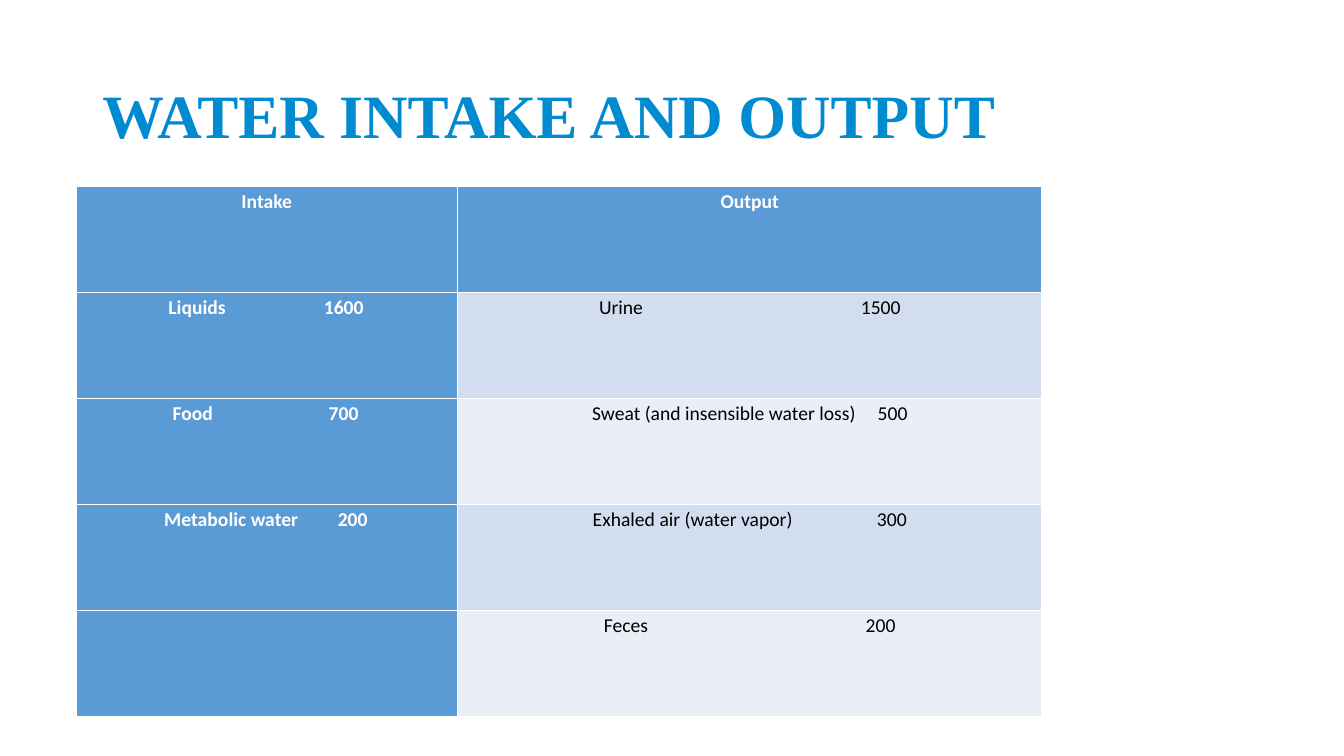
import pptx
import pptx.util
import pptx.dml.color
import pptx.enum.text
import lxml.etree
from pptx.oxml.ns import qn

Pt = pptx.util.Pt
Color = pptx.dml.color.RGBColor
Align = pptx.enum.text.PP_ALIGN

TITLE = Color(0x00, 0x8A, 0xD0)
BLUE = Color(0x5B, 0x9B, 0xD5)
BANDS = [Color(0xEA, 0xEF, 0xF7), Color(0xD2, 0xDE, 0xEF)]
WHITE = Color(0xFF, 0xFF, 0xFF)
BLACK = Color(0x00, 0x00, 0x00)

# Each entry: label, amount, left margin, distance from label to amount
INTAKE = [
    ("Liquids", "1600", 66, 111),
    ("Food", "700", 69, 111.5),
    ("Metabolic water", "200", 63, 124),
]
OUTPUT = [
    ("Urine", "1500", 101, 187),
    ("Sweat (and insensible water loss)", "500", 96, 204),
    ("Exhaled air (water vapor)", "300", 96.5, 203),
    ("Feces", "200", 104.5, 187),
]


def write(cell, text, color, bold):
    cell.text = text
    para = cell.text_frame.paragraphs[0]
    para.line_spacing = 1.15
    para.font.name = "Calibri"
    para.font.size = Pt(14)
    para.font.bold = bold
    para.font.color.rgb = color
    return para


deck = pptx.Presentation()
deck.slide_width, deck.slide_height = Pt(960), Pt(540)
slide = deck.slides.add_slide(deck.slide_layouts[5])

title = slide.shapes.title
title.left, title.top, title.width, title.height = Pt(66), Pt(28.8), Pt(1044 - 216), Pt(104.4)
title.text = "WATER INTAKE AND OUTPUT"
head = title.text_frame.paragraphs[0]
head.alignment = Align.LEFT
head.font.name = "Times New Roman"
head.font.size = Pt(44)
head.font.bold = True
head.font.color.rgb = TITLE

table = slide.shapes.add_table(5, 2, Pt(54.3), Pt(133.4), Pt(690), Pt(378.7)).table
table.first_col = True
table.columns[0].width = Pt(272.6)
table.columns[1].width = Pt(417.4)

for row in range(5):
    table.rows[row].height = Pt(75.74)
    for col in range(2):
        cell = table.cell(row, col)
        cell.margin_left = cell.margin_right = Pt(5)
        cell.margin_top = cell.margin_bottom = 0
        cell.fill.solid()
        cell.fill.fore_color.rgb = BLUE if row == 0 or col == 0 else BANDS[row % 2]

for col, (name, items) in enumerate([("Intake", INTAKE), ("Output", OUTPUT)]):
    write(table.cell(0, col), name, WHITE, True).alignment = Align.CENTER
    for row, (label, amount, left, gap) in enumerate(items, 1):
        cell = table.cell(row, col)
        cell.margin_left = Pt(left)
        para = write(cell, f"{label}\t{amount}", BLACK if col else WHITE, col == 0)
        para.alignment = Align.LEFT
        tabs = lxml.etree.Element(qn("a:tabLst"))
        lxml.etree.SubElement(tabs, qn("a:tab"), pos=str(Pt(gap)), algn="l")
        # The schema wants the tab list ahead of the default run properties
        para.font._element.addprevious(tabs)

deck.save("out.pptx")
